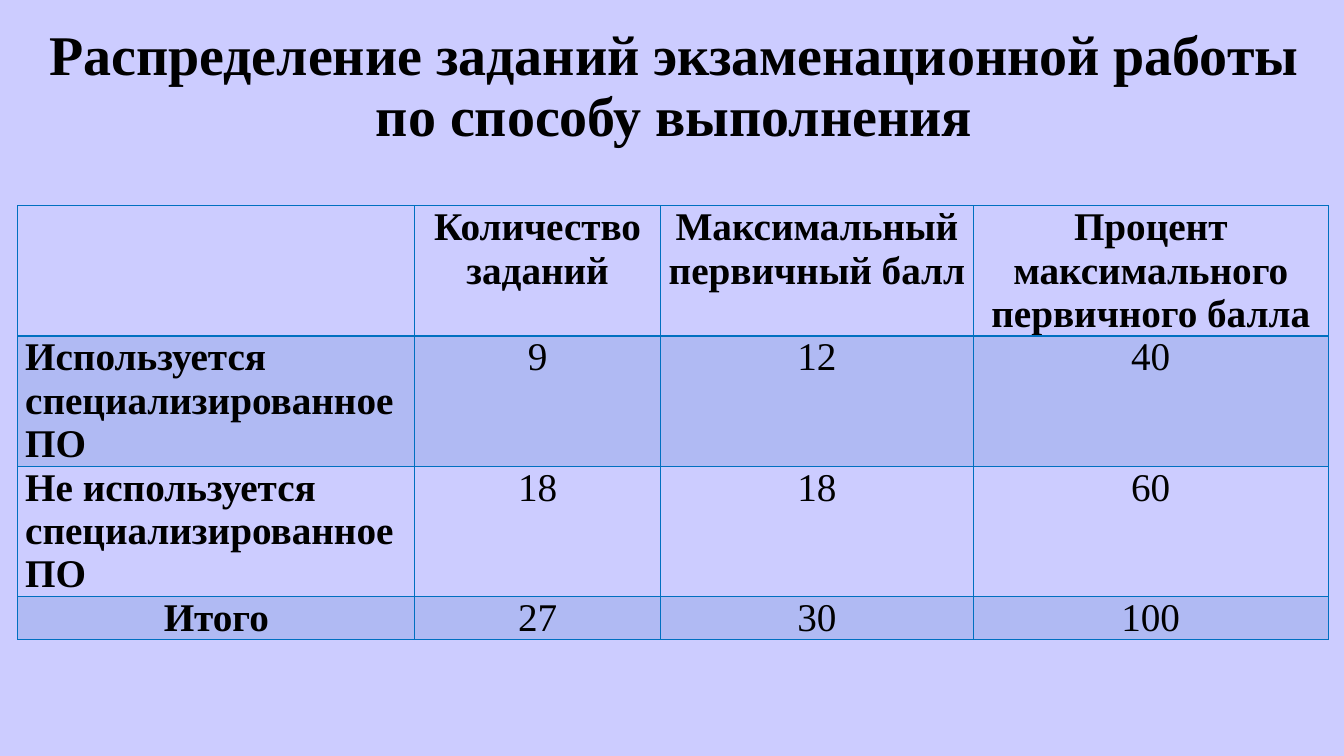
from dataclasses import dataclass

from lxml.etree import SubElement
from pptx import Presentation
from pptx.dml.color import RGBColor as RGB
from pptx.enum.text import MSO_ANCHOR as ANCHOR, MSO_AUTO_SIZE as AUTO_SIZE, PP_ALIGN as ALIGN
from pptx.oxml.ns import qn
from pptx.util import Pt

EMU_PER_PX = 9525


@dataclass(frozen=True)
class Theme:
    """Colours, font and type sizes of the slide."""
    font: str = "Times New Roman"
    background: str = "CCCCFF"
    text: str = "000000"
    border: str = "0070C0"
    band: str = "4472C4"
    band_alpha: int = 20
    border_width: int = 1
    title_size: int = 40
    table_size: int = 28


THEME = Theme()
TITLE = "Распределение заданий экзаменационной работы по способу выполнения"
COLUMN_WIDTHS = (378, 234, 298, 338)
ROW_HEIGHTS = (124, 124, 124, 41)
ROWS = (
    ("", "Количество\nзаданий", "Максимальный первичный балл",
     "Процент максимального первичного балла"),
    ("Используется\nспециализированное ПО", "9", "12", "40"),
    ("Не используется\nспециализированное ПО", "18", "18", "60"),
    ("Итого", "27", "30", "100"),
)


def px(n):
    """Turn pixels into EMU."""
    return n * EMU_PER_PX


def write(tf, text, size, bold=False, align=ALIGN.CENTER, spacing=1.0):
    """Fill a text frame, one paragraph per line of text."""
    tf.text = text
    tf.word_wrap = True
    for p in tf.paragraphs:
        p.alignment = align
        p.line_spacing = spacing
        p.font.size = Pt(size)
        for r in p.runs:
            r.font.name = THEME.font
            r.font.size = Pt(size)
            r.font.bold = bold
            r.font.color.rgb = RGB.from_string(THEME.text)


def add_borders(cell):
    """Draw a thin line on all four sides of a cell."""
    props = cell._tc.get_or_add_tcPr()
    for side in ("lnL", "lnR", "lnT", "lnB"):
        ln = SubElement(props, qn(f"a:{side}"), w=str(Pt(THEME.border_width)))
        fill = SubElement(ln, qn("a:solidFill"))
        SubElement(fill, qn("a:srgbClr"), val=THEME.border)


def fill_cell(cell, banded):
    """Give a banded cell a translucent fill and leave others clear."""
    if not banded:
        cell.fill.background()
        return
    cell.fill.solid()
    cell.fill.fore_color.rgb = RGB.from_string(THEME.band)
    color = cell._tc.tcPr.find(f"{qn('a:solidFill')}/{qn('a:srgbClr')}")
    SubElement(color, qn("a:alpha"), val=str(THEME.band_alpha * 1000))


def place_title(slide, left, top, width, height):
    """Place the heading in the title placeholder."""
    sp = slide.shapes.title
    sp.left, sp.top, sp.width, sp.height = map(px, (left, top, width, height))
    tf = sp.text_frame
    write(tf, TITLE, THEME.title_size, bold=True, spacing=0.9)
    tf.vertical_anchor = ANCHOR.MIDDLE
    tf.auto_size = AUTO_SIZE.NONE


def place_table(slide, left, top):
    """Place the table of tasks with its corner at the given point."""
    size = sum(COLUMN_WIDTHS), sum(ROW_HEIGHTS)
    table = slide.shapes.add_table(
        len(ROWS), len(COLUMN_WIDTHS), *map(px, (left, top, *size))).table
    table.first_row = table.horz_banding = False
    for column, width in zip(table.columns, COLUMN_WIDTHS):
        column.width = px(width)
    for i, (row, height) in enumerate(zip(ROWS, ROW_HEIGHTS)):
        table.rows[i].height = px(height)
        for j, text in enumerate(row):
            cell = table.cell(i, j)
            cell.margin_left = cell.margin_right = px(7)
            cell.margin_top = cell.margin_bottom = 0
            align = ALIGN.LEFT if j == 0 and i in (1, 2) else ALIGN.CENTER
            write(cell.text_frame, text, THEME.table_size, bold=i == 0 or j == 0, align=align)
            add_borders(cell)
            fill_cell(cell, banded=i % 2 == 1)


def main():
    """Build and save the slide."""
    prs = Presentation()
    prs.slide_width, prs.slide_height = px(1280), px(720)
    slide = prs.slides.add_slide(prs.slide_layouts[5])
    slide.background.fill.solid()
    slide.background.fill.fore_color.rgb = RGB.from_string(THEME.background)
    place_title(slide, 18, 34, 1248, 99)
    place_table(slide, 17, 196)
    prs.save("out.pptx")


if __name__ == "__main__":
    main()
